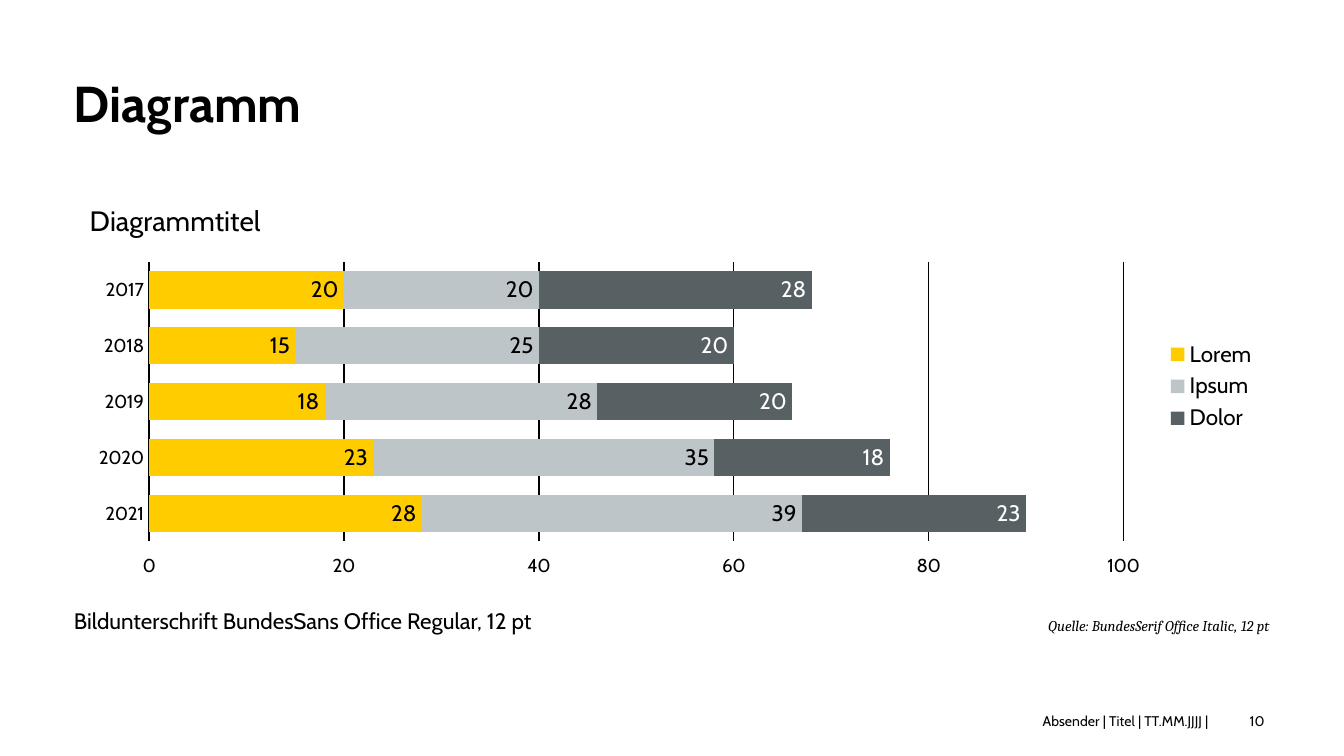
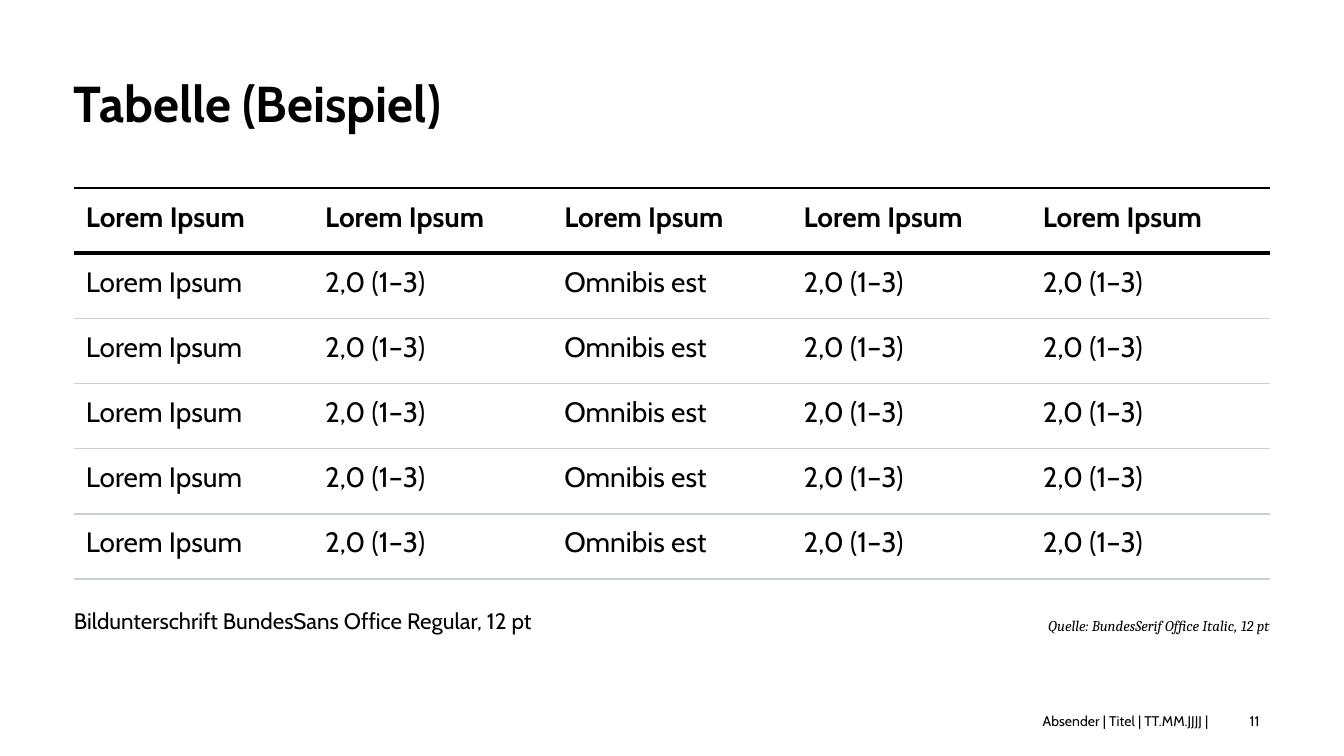
from lxml import etree
from pptx import Presentation
from pptx import util as u
from pptx.chart.data import CategoryChartData
from pptx.dml.color import RGBColor
from pptx.enum import chart as ch, text as tx
from pptx.oxml.ns import qn

# Shared look
SANS, SERIF = "Cabin", "Cambria"
BLACK, WHITE, RULE = "000000", "FFFFFF", "CBD1D3"
YELLOW, SILVER, SLATE = "FFCC00", "BEC5C9", "576164"
LEFT, WIDTH, TOP = 0.55, 8.9, 1.4
CHART = (LEFT, TOP, WIDTH, 2.95)

YEARS = ["2021", "2020", "2019", "2018", "2017"]
SERIES = [
    ("Lorem", [28, 23, 18, 15, 20], YELLOW, BLACK),
    ("Ipsum", [39, 35, 28, 25, 20], SILVER, BLACK),
    ("Dolor", [23, 18, 20, 20, 28], SLATE, WHITE),
]
HEAD = ["Lorem Ipsum"] * 5
ROW = ["Lorem Ipsum", "2,0 (1–3)", "Omnibis est", "2,0 (1–3)", "2,0 (1–3)"]


def rgb(code):
    return RGBColor.from_string(code)


def style(font, size, color=BLACK, name=SANS, bold=False, italic=False):
    font.size, font.name = u.Pt(size), name
    font.bold, font.italic = bold, italic
    font.color.rgb = rgb(color)


def inches(box):
    return [u.Inches(v) for v in box]


# Text
def write(frame, words, size, align=tx.PP_ALIGN.LEFT, lead=None, **look):
    para = frame.paragraphs[0]
    para.alignment = align
    if lead:
        para.line_spacing = u.Pt(lead)
    run = para.add_run()
    run.text = words
    style(run.font, size, **look)


def inset(part, left, top, right, bottom):
    part.margin_left, part.margin_top = u.Inches(left), u.Inches(top)
    part.margin_right, part.margin_bottom = u.Inches(right), u.Inches(bottom)


def label(slide, box, words, size, anchor, flush=False, grow=False, **look):
    frame = slide.shapes.add_textbox(*inches(box)).text_frame
    frame.word_wrap = True
    frame.vertical_anchor = anchor
    if flush:
        inset(frame, 0, 0, 0, 0)
    if grow:
        frame.auto_size = tx.MSO_AUTO_SIZE.SHAPE_TO_FIT_TEXT
    write(frame, words, size, **look)


# Slide frame: title, source, caption and footer
def page(deck, title, number):
    slide = deck.slides.add_slide(deck.slide_layouts[5])
    head = slide.shapes.title
    head.left, head.top, head.width, head.height = inches((LEFT, 0.53, WIDTH, 0.87))
    frame = head.text_frame
    frame.auto_size = tx.MSO_AUTO_SIZE.NONE
    frame.vertical_anchor = tx.MSO_ANCHOR.TOP
    inset(frame, 0, 0, 0, 0)
    write(frame, title, 27, lead=33, bold=True)

    low, mid, right = tx.MSO_ANCHOR.BOTTOM, tx.MSO_ANCHOR.MIDDLE, tx.PP_ALIGN.RIGHT
    label(slide, (6.73, 4.55, 2.72, 0.17), "Quelle: BundesSerif Office Italic, 12 pt",
          8, low, flush=True, grow=True, align=right, lead=14.4, name=SERIF, italic=True)
    label(slide, (LEFT, 4.45, 5.79, 0.27),
          "Bildunterschrift BundesSans Office Regular, 12 pt",
          12, low, flush=True, lead=14.4)
    label(slide, (3.03, 5.3, 6.06, 0.13), "Absender | Titel | TT.MM.JJJJ |",
          7.5, mid, align=right)
    label(slide, (9.2, 5.3, 0.47, 0.13), str(number), 7.5, mid)
    return slide


# Chart
def place(part, index, left, top, width=None, height=None):
    """Fix a chart part at a slide position given in inches."""
    old = part.find(qn("c:layout"))
    if old is not None:
        part.remove(old)
    layout = etree.Element(qn("c:layout"))
    part.insert(index, layout)
    manual = etree.SubElement(layout, qn("c:manualLayout"))

    def put(tag, value):
        etree.SubElement(manual, qn("c:" + tag)).set("val", str(value))

    if width:
        put("layoutTarget", "inner")
    put("xMode", "edge")
    put("yMode", "edge")
    put("x", (left - CHART[0]) / CHART[2])
    put("y", (top - CHART[1]) / CHART[3])
    if width:
        put("w", width / CHART[2])
        put("h", height / CHART[3])


def axes(chart):
    cat, val = chart.category_axis, chart.value_axis
    cat.major_tick_mark = ch.XL_TICK_MARK.NONE
    cat.has_major_gridlines = False
    val.major_tick_mark = ch.XL_TICK_MARK.OUTSIDE
    val.minimum_scale, val.maximum_scale, val.major_unit = 0, 100, 20
    val.has_major_gridlines = True
    val.format.line.fill.background()
    for line in (cat.format.line, val.major_gridlines.format.line):
        line.color.rgb = rgb(BLACK)
        line.width = u.Pt(0.75)
    for axis in (cat, val):
        style(axis.tick_labels.font, 10)


def bars(slide):
    data = CategoryChartData(number_format="General")
    data.categories = YEARS
    for name, values, *_ in SERIES:
        data.add_series(name, values)
    chart = slide.shapes.add_chart(
        ch.XL_CHART_TYPE.BAR_STACKED, *inches(CHART), data).chart
    style(chart.font, 10)
    axes(chart)

    plot = chart.plots[0]
    plot.gap_width, plot.overlap = 50, 100
    plot.vary_by_categories = False
    for series, (_, _, color, ink) in zip(plot.series, SERIES):
        series.format.fill.solid()
        series.format.fill.fore_color.rgb = rgb(color)
        marks = series.data_labels
        marks.show_value = True
        marks.position = ch.XL_LABEL_POSITION.INSIDE_END
        style(marks.font, 12, ink)

    chart.has_title = True
    write(chart.chart_title.text_frame, "Diagrammtitel", 15)
    chart.has_legend = True
    chart.legend.position = ch.XL_LEGEND_POSITION.RIGHT
    chart.legend.include_in_layout = False
    style(chart.legend.font, 12)

    root = chart.element.find(qn("c:chart"))
    place(root.find(qn("c:title")), 1, 0.63, 1.46)
    place(root.find(qn("c:plotArea")), 0, 1.11, 1.95, 7.25, 2.08)


# Table
def edge(cell, side, color, width):
    props = cell._tc.get_or_add_tcPr()
    line = etree.Element(qn("a:" + side), w=str(u.Pt(width)))
    fill = etree.SubElement(line, qn("a:solidFill"))
    etree.SubElement(fill, qn("a:srgbClr"), val=color)
    props.insert(0, line)


def grid(slide, rows):
    box = (LEFT, TOP, WIDTH, 2.91)
    table = slide.shapes.add_table(len(rows), len(HEAD), *inches(box)).table
    table.first_row = table.horz_banding = False
    # Plain style without grid lines
    table._tbl.tblPr.find(qn("a:tableStyleId")).text = (
        "{2D5ABB26-0587-4C30-8999-92F81FD0307C}")
    for col in table.columns:
        col.width = u.Inches(WIDTH / len(HEAD))
    thin, thick = (RULE, 1), (BLACK, 2.25)
    for r, words in enumerate(rows):
        table.rows[r].height = u.Inches(box[3] / len(rows))
        above = {0: (BLACK, 1), 1: thick}.get(r, thin)
        below = thin if r else thick
        for c, word in enumerate(words):
            cell = table.cell(r, c)
            cell.fill.background()
            inset(cell, 0.09, 0.09, 0.07, 0.06 if r else 0.04)
            write(cell.text_frame, word, 15, bold=r == 0)
            edge(cell, "lnB", *below)
            edge(cell, "lnT", *above)


def main():
    deck = Presentation()
    # Widescreen, 16:9
    deck.slide_width = u.Inches(10)
    deck.slide_height = u.Inches(10 * 9 / 16)
    bars(page(deck, "Diagramm", 10))
    grid(page(deck, "Tabelle (Beispiel)", 11), [HEAD] + [ROW] * 5)
    deck.save("out.pptx")


if __name__ == "__main__":
    main()
